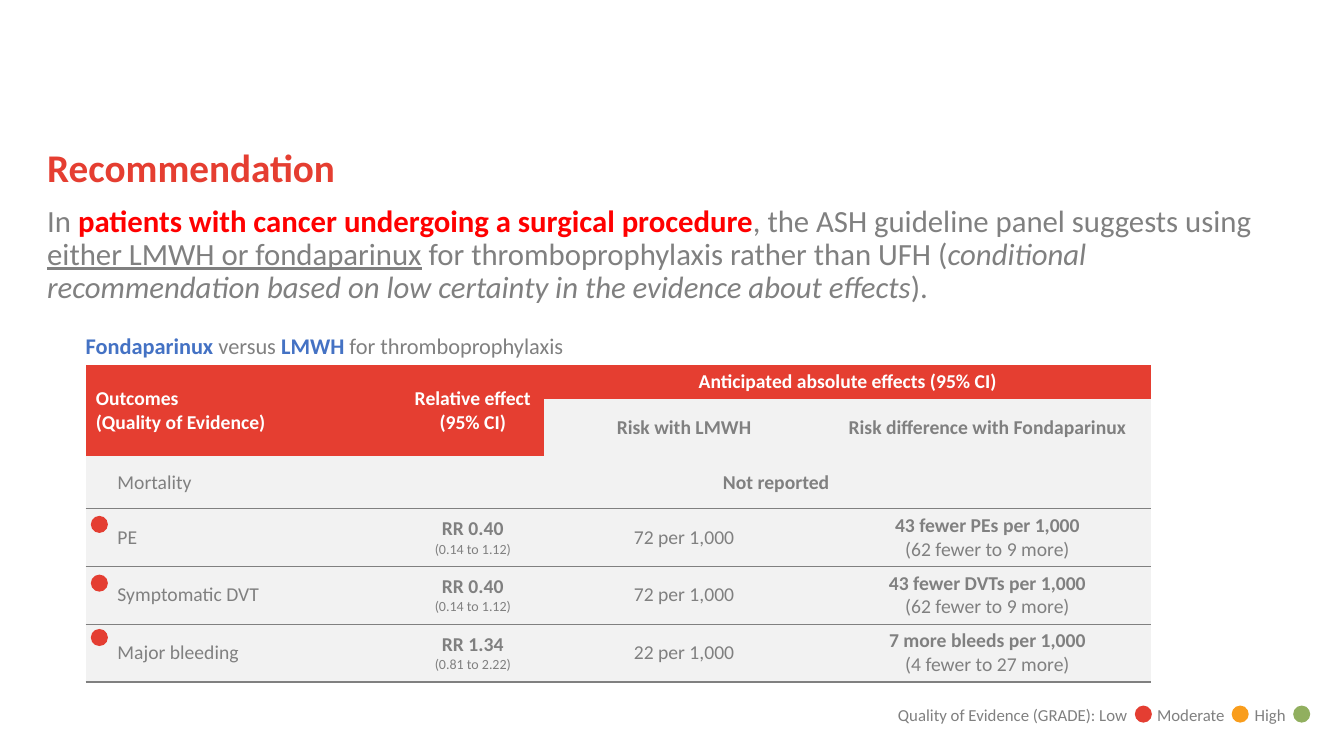
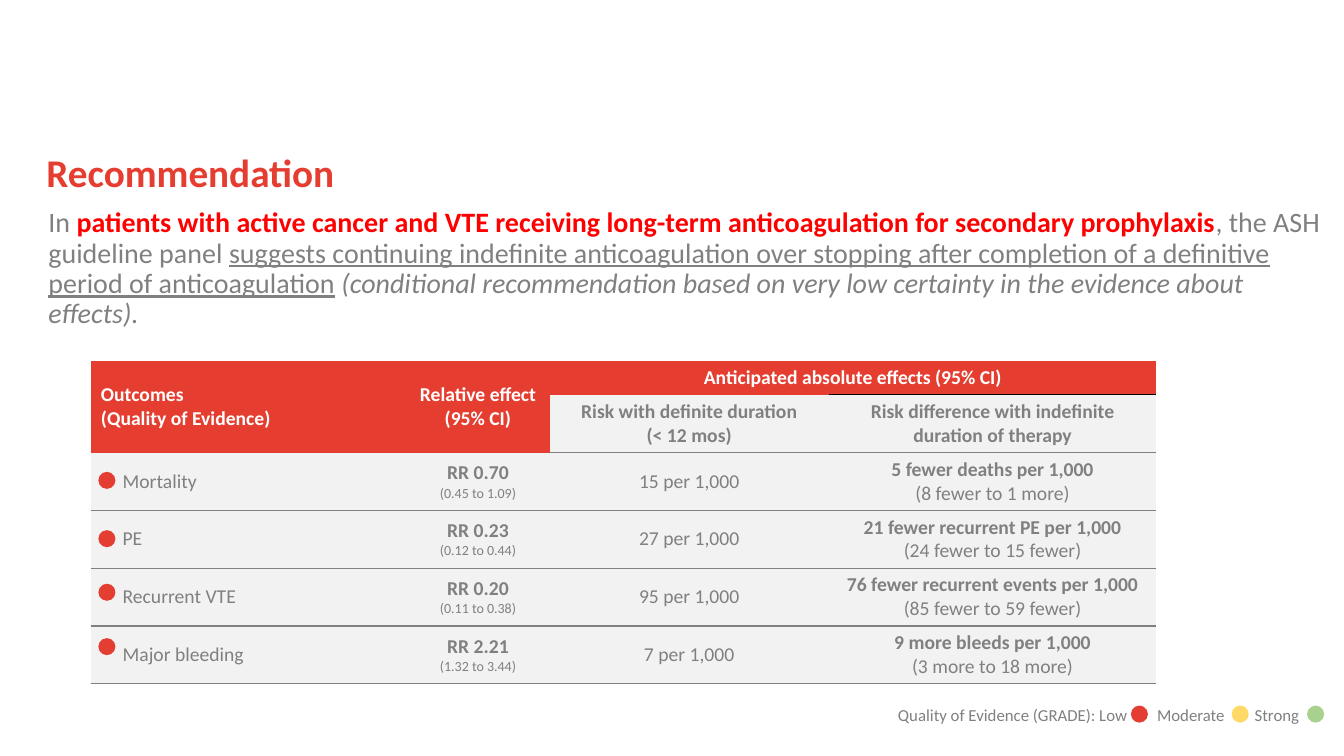
from pptx import Presentation
from pptx.dml.color import RGBColor
from pptx.enum.shapes import MSO_SHAPE
from pptx.enum.text import MSO_ANCHOR, MSO_AUTO_SIZE, PP_ALIGN
from pptx.oxml.ns import qn
from pptx.util import Cm, Pt
from lxml.etree import SubElement

FONT = "Calibri"
HEX = {
    "red": "E53E31", "dot": "E43E32", "alert": "FF0000", "blue": "4472C4",
    "gray": "808080", "pale": "F2F2F2", "white": "FFFFFF", "black": "000000",
    "orange": "F99D1C", "green": "91AF5F", "yellow": "FFD966", "lime": "A9D18E",
}

# Content: a run is (text, colour, flags), with flags b, i and u
SLIDES = [
    {
        "title": (1.19, 3.6),
        "body": (1.19, 5.18, 31.47, 4, 22),
        "text": [
            ("In ", "gray", ""),
            ("patients with cancer undergoing a surgical procedure", "alert", "b"),
            (", the ASH guideline panel suggests using ", "gray", ""),
            ("either LMWH or fondaparinux", "gray", "u"),
            (" for thromboprophylaxis rather than UFH (", "gray", ""),
            ("conditional recommendation based on low certainty in the evidence "
             "about effects", "gray", "i"),
            (").", "gray", ""),
        ],
        "caption": [
            ("Fondaparinux", "blue", "b"), (" versus ", "gray", ""),
            ("LMWH", "blue", "b"), (" for thromboprophylaxis", "gray", ""),
        ],
        "table": (2.16, 9.19),
        "risks": [["Risk with LMWH"], ["Risk difference with Fondaparinux"]],
        "rows": [
            ("Mortality", None),
            ("PE", "RR 0.40", "(0.14 to 1.12)", "72 per 1,000",
             "43 fewer PEs per 1,000", "(62 fewer to 9 more)"),
            ("Symptomatic DVT", "RR 0.40", "(0.14 to 1.12)", "72 per 1,000",
             "43 fewer DVTs per 1,000", "(62 fewer to 9 more)"),
            ("Major bleeding", "RR 1.34", "(0.81 to 2.22)", "22 per 1,000",
             "7 more bleeds per 1,000", "(4 fewer to 27 more)"),
        ],
        "rules": {3: "gray", 4: "gray", 5: "gray", 6: "gray"},
        "dots": (2.29, [13, 14.48, 15.85]),
        "legend": ("High", [(28.6, "dot"), (31.04, "orange"), (32.59, "green")]),
    },
    {
        "title": (1.17, 3.73),
        "body": (1.22, 5.26, 32.11, 3.6, 20),
        "text": [
            ("In ", "gray", ""),
            ("patients with active cancer and VTE receiving long-term "
             "anticoagulation for secondary prophylaxis", "alert", "b"),
            (", the ASH guideline panel ", "gray", ""),
            ("suggests continuing indefinite anticoagulation over stopping after "
             "completion of a definitive period of anticoagulation", "gray", "u"),
            (" ", "gray", ""),
            ("(conditional recommendation based on very low certainty in the "
             "evidence about effects).", "gray", "i"),
        ],
        "caption": None,
        "table": (2.29, 9.09),
        "risks": [["Risk with definite duration", "(< 12 mos)"],
                  ["Risk difference with indefinite duration of therapy"]],
        "rows": [
            ("Mortality", "RR 0.70", "(0.45 to 1.09)", "15 per 1,000",
             "5 fewer deaths per 1,000", "(8 fewer to 1 more)"),
            ("PE", "RR 0.23", "(0.12 to 0.44)", "27 per 1,000",
             "21 fewer recurrent PE per 1,000", "(24 fewer to 15 fewer)"),
            ("Recurrent VTE", "RR 0.20", "(0.11 to 0.38)", "95 per 1,000",
             "76 fewer recurrent events per 1,000", "(85 fewer to 59 fewer)"),
            ("Major bleeding", "RR 2.21", "(1.32 to 3.44)", "7 per 1,000",
             "9 more bleeds per 1,000", "(3 more to 18 more)"),
        ],
        "rules": {(1, 3): "black", (2, 2): "gray", (2, 3): "gray",
                  3: "gray", 4: "gray", 5: "gray", 6: "gray"},
        "dots": (2.48, [11.89, 13.36, 14.71, 16.08]),
        "legend": ("Strong", [(28.5, "dot"), (31.04, "yellow"), (32.94, "lime")]),
    },
]

COLS = [7.95, 3.61, 7.04, 8.25]
HEAD = [0.83, 1.43]
ROW, SHORT = 1.43, 1.31
DOT = 0.43
TABS = [6.53, 8.99]


def tint(key):
    return RGBColor.from_string(HEX[key])


def write(frame, paras, size, align=PP_ALIGN.LEFT):
    """Fill a frame; each paragraph is a list of runs, with an optional size."""
    frame.word_wrap = True
    for num, runs in enumerate(paras):
        para = frame.paragraphs[0] if num == 0 else frame.add_paragraph()
        para.alignment = align
        for text, key, flags, *own in runs:
            run = para.add_run()
            run.text = text
            font = run.font
            font.name, font.size = FONT, Pt(own[0] if own else size)
            font.color.rgb = tint(key)
            font.bold, font.italic = "b" in flags, "i" in flags
            font.underline = "u" in flags


def place(shape, left, top, width, height):
    shape.left, shape.top = Cm(left), Cm(top)
    shape.width, shape.height = Cm(width), Cm(height)


def trim(frame):
    frame.margin_left = frame.margin_right = 0
    frame.margin_top = frame.margin_bottom = 0
    frame.auto_size = MSO_AUTO_SIZE.NONE
    frame.vertical_anchor = MSO_ANCHOR.TOP


def add_dot(slide, left, top, key):
    dot = slide.shapes.add_shape(
        MSO_SHAPE.OVAL, Cm(left), Cm(top), Cm(DOT), Cm(DOT))
    dot.shadow.inherit = False
    dot.fill.solid()
    dot.fill.fore_color.rgb = tint(key)
    dot.line.fill.background()


def add_intro(slide, data):
    title = slide.shapes.title
    place(title, *data["title"], 30.48, 1.4)
    trim(title.text_frame)
    write(title.text_frame, [[("Recommendation", "red", "b")]], 28)

    *box, size = data["body"]
    body = slide.placeholders[1]
    place(body, *box)
    trim(body.text_frame)
    para = body.text_frame.paragraphs[0]
    props = para._p.get_or_add_pPr()
    props.set("marL", "0")
    props.set("indent", "0")
    SubElement(props, qn("a:buNone"))
    para.line_spacing, para.space_before = 0.9, Pt(0)
    write(body.text_frame, [data["text"]], size)

    if data["caption"]:
        note = slide.shapes.add_textbox(Cm(2.16), Cm(8.38), Cm(31), Cm(0.69))
        trim(note.text_frame)
        write(note.text_frame, [data["caption"]], 16)


def edge(cell, tag, key):
    line = SubElement(cell._tc.get_or_add_tcPr(), qn("a:" + tag), w="12700")
    if key:
        fill = SubElement(line, qn("a:solidFill"))
        SubElement(fill, qn("a:srgbClr"), val=HEX[key])
    else:
        SubElement(line, qn("a:noFill"))


def put(cell, lines, key="gray", align=PP_ALIGN.CENTER):
    """Write (text, flags, size) lines into a cell."""
    write(cell.text_frame, [[(text, key, flags, size)]
                            for text, flags, size in lines], 14, align)


def add_grid(slide, data):
    rows, rules = data["rows"], data["rules"]
    highs = HEAD + [ROW if row[1] else SHORT for row in rows]
    left, top = data["table"]
    grid = slide.shapes.add_table(
        len(highs), len(COLS), Cm(left), Cm(top), Cm(sum(COLS)), Cm(sum(highs))).table
    grid.first_row = grid.horz_banding = False
    for col, width in zip(grid.columns, COLS):
        col.width = Cm(width)
    for row, high in zip(grid.rows, highs):
        row.height = Cm(high)

    # Cell borders and fills; rule n lies above row n
    def rule(r, c):
        return rules.get((r, c), rules.get(r))

    for r in range(len(highs)):
        for c in range(len(COLS)):
            cell = grid.cell(r, c)
            edge(cell, "lnL", None)
            edge(cell, "lnR", None)
            edge(cell, "lnT", rule(r, c))
            edge(cell, "lnB", rule(r + 1, c))
            cell.fill.solid()
            red = r == 0 or (r == 1 and c < 2)
            cell.fill.fore_color.rgb = tint("red" if red else "pale")
            cell.vertical_anchor = MSO_ANCHOR.MIDDLE

    # Header
    grid.cell(0, 0).merge(grid.cell(1, 0))
    grid.cell(0, 1).merge(grid.cell(1, 1))
    grid.cell(0, 2).merge(grid.cell(0, 3))
    put(grid.cell(0, 0), [("Outcomes", "b", 14), ("(Quality of Evidence)", "b", 14)],
        "white", PP_ALIGN.LEFT)
    put(grid.cell(0, 1), [("Relative effect", "b", 14), ("(95% CI)", "b", 14)], "white")
    put(grid.cell(0, 2), [("Anticipated absolute effects (95% CI)", "b", 14)], "white")
    for c, lines in enumerate(data["risks"], 2):
        put(grid.cell(1, c), [(line, "b", 14) for line in lines])

    # Outcomes
    for r, (name, ratio, *rest) in enumerate(rows, len(HEAD)):
        first = grid.cell(r, 0)
        first.margin_left = Cm(0.8)
        put(first, [(name, "", 14)], align=PP_ALIGN.LEFT)
        if not ratio:
            grid.cell(r, 1).merge(grid.cell(r, 3))
            put(grid.cell(r, 1), [("Not reported", "b", 14)])
            continue
        span, risk, gain, spread = rest
        put(grid.cell(r, 1), [(ratio, "b", 14), (span, "", 10)])
        put(grid.cell(r, 2), [(risk, "", 14)])
        put(grid.cell(r, 3), [(gain, "b", 14), (spread, "", 14)])


def add_key(slide, data):
    best, dots = data["legend"]
    box = slide.shapes.add_textbox(Cm(22.38), Cm(17.63), Cm(11.48), Cm(0.76))
    props = box.text_frame.paragraphs[0]._p.get_or_add_pPr()
    stops = SubElement(props, qn("a:tabLst"))
    for stop in TABS:
        SubElement(stops, qn("a:tab"), pos=str(Cm(stop)), algn="l")
    text = "\t".join(["Quality of Evidence (GRADE): Low", "Moderate", best])
    write(box.text_frame, [[(text, "gray", "")]], 12)
    for left, key in dots:
        add_dot(slide, left, 17.78, key)


def main():
    deck = Presentation()
    deck.slide_width, deck.slide_height = Cm(33.87), Cm(19.05)
    for data in SLIDES:
        slide = deck.slides.add_slide(deck.slide_layouts[1])
        add_intro(slide, data)
        add_grid(slide, data)
        add_key(slide, data)
        left, tops = data["dots"]
        for top in tops:
            add_dot(slide, left, top, "dot")
    deck.save("out.pptx")


if __name__ == "__main__":
    main()
